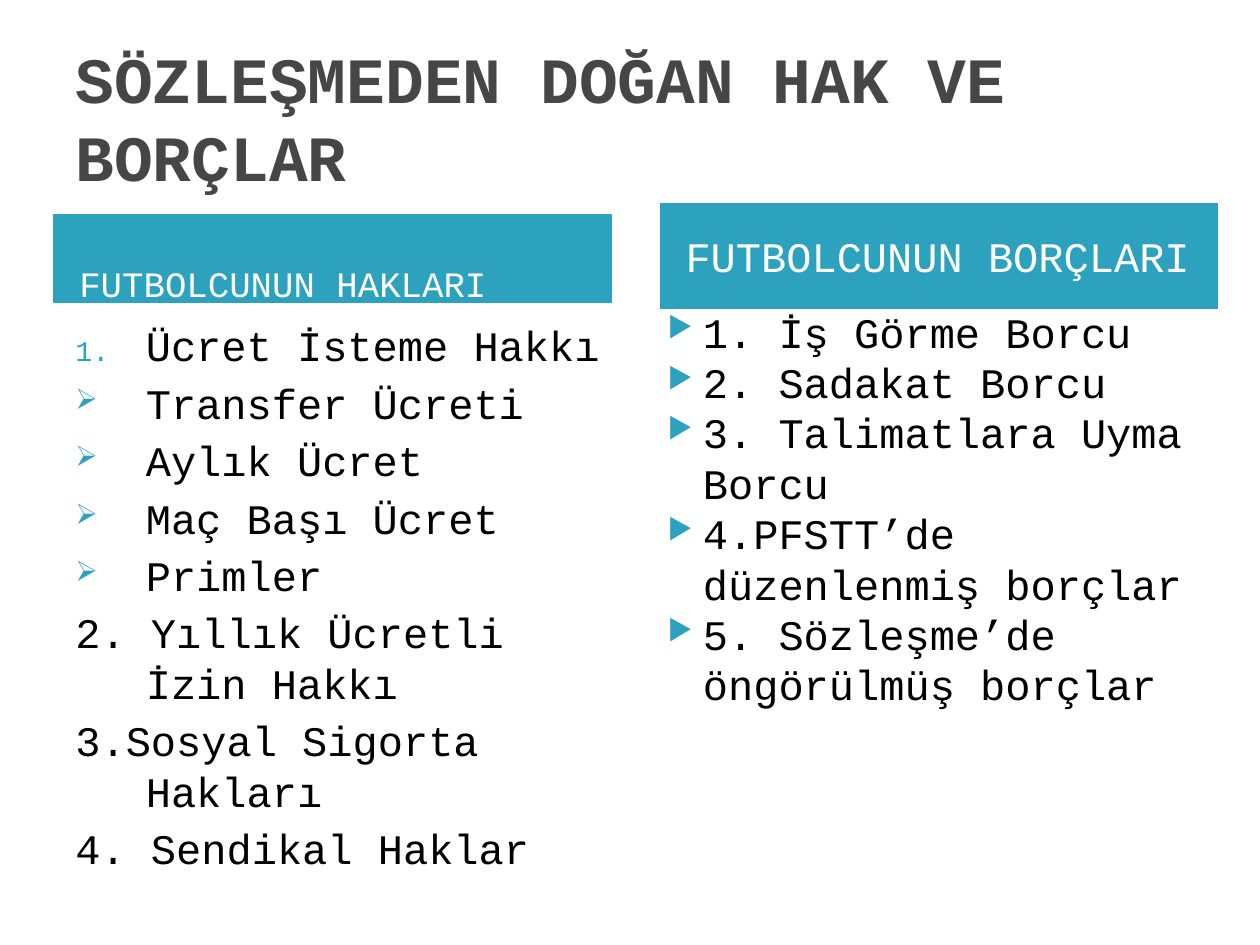
from lxml.etree import SubElement
from pptx import Presentation
from pptx.dml.color import RGBColor
from pptx.enum.shapes import MSO_SHAPE
from pptx.enum.text import MSO_ANCHOR, PP_ALIGN
from pptx.oxml.ns import qn
from pptx.util import Cm, Pt

FONT = "Courier New"
HUES = {"title": "464646", "teal": "2DA2BF", "white": "FFFFFF", "text": "000000"}

# Each entry: mark ("#" means a number), text
RIGHTS = [
    ("#", "Ücret İsteme Hakkı"),
    ("➢", "Transfer Ücreti"),
    ("➢", "Aylık Ücret"),
    ("➢", "Maç Başı Ücret"),
    ("➢", "Primler"),
    (None, "2. Yıllık Ücretli İzin Hakkı"),
    (None, "3.Sosyal Sigorta Hakları"),
    (None, "4. Sendikal Haklar"),
]
DEBTS = [("▶", text) for text in (
    "1. İş Görme Borcu",
    "2. Sadakat Borcu",
    "3. Talimatlara Uyma Borcu",
    "4.PFSTT’de düzenlenmiş borçlar",
    "5. Sözleşme’de öngörülmüş borçlar",
)]


def color(name):
    return RGBColor.from_string(HUES[name])


def add_run(para, text, size, hue, bold=False):
    run = para.add_run()
    run.text = text
    font = run.font
    font.name, font.size, font.bold = FONT, Pt(size), bold
    font.color.rgb = color(hue)


def set_frame(shape, anchor, left=0.25, top=0.13, base=0.13):
    frame = shape.text_frame
    frame.word_wrap = True
    frame.vertical_anchor = anchor
    frame.margin_left, frame.margin_right = Cm(left), Cm(0.25)
    frame.margin_top, frame.margin_bottom = Cm(top), Cm(base)
    return frame


def set_mark(para, mark, left, hang):
    props = para._p.get_or_add_pPr()
    props.set("marL", str(Cm(left)))
    props.set("indent", str(-Cm(hang)))
    if mark is None:
        SubElement(props, qn("a:buNone"))
        return
    tint = SubElement(props, qn("a:buClr"))
    SubElement(tint, qn("a:srgbClr"), val=HUES["teal"])
    SubElement(props, qn("a:buSzPct"), val="68000")
    if mark == "#":
        SubElement(props, qn("a:buAutoNum"), type="arabicPeriod")
    else:
        SubElement(props, qn("a:buChar"), char=mark)


def add_title(slide, text):
    box = slide.shapes.add_textbox(Cm(1.27), Cm(0.76), Cm(22.86), Cm(3.18))
    frame = set_frame(box, MSO_ANCHOR.MIDDLE)
    add_run(frame.paragraphs[0], text, 36.9, "title", True)


def add_head(slide, text, left, top, height, size, inset=0.13, base=0.13):
    bar = slide.shapes.add_shape(
        MSO_SHAPE.RECTANGLE, Cm(left), Cm(top), Cm(11.23), Cm(height))
    bar.shadow.inherit = False
    bar.fill.solid()
    bar.fill.fore_color.rgb = color("teal")
    bar.line.color.rgb = color("teal")
    bar.line.width = Pt(0.75)
    frame = set_frame(bar, MSO_ANCHOR.MIDDLE, 0.51, inset, base)
    para = frame.paragraphs[0]
    para.alignment = PP_ALIGN.LEFT
    add_run(para, text, size, "white")


def add_list(slide, items, left, inset, indent, hang, gap):
    box = slide.shapes.add_textbox(Cm(left), Cm(4.01), Cm(11.23), Cm(10.95))
    frame = set_frame(box, MSO_ANCHOR.TOP, top=inset)
    for i, (mark, text) in enumerate(items):
        para = frame.add_paragraph() if i else frame.paragraphs[0]
        set_mark(para, mark, indent, hang)
        if i:
            para.space_before = Pt(gap)
        add_run(para, text, 24, "text")


def main():
    deck = Presentation()
    deck.slide_width, deck.slide_height = Cm(25.4), Cm(19.05)
    slide = deck.slides.add_slide(deck.slide_layouts[6])

    add_title(slide, "SÖZLEŞMEDEN DOĞAN HAK VE BORÇLAR")

    # Column heads
    add_head(slide, "FUTBOLCUNUN HAKLARI", 1.09, 4.32, 1.78, 20.4, 1.02, 0)
    add_head(slide, "FUTBOLCUNUN BORÇLARI", 13.31, 4.11, 2.11, 24)

    # Lists start below the heads
    add_list(slide, RIGHTS, 1.27, 2.44, 1.42, 1.42, 4)
    add_list(slide, DEBTS, 12.9, 2.16, 1.02, 0.71, 0)

    deck.save("out.pptx")


if __name__ == "__main__":
    main()
